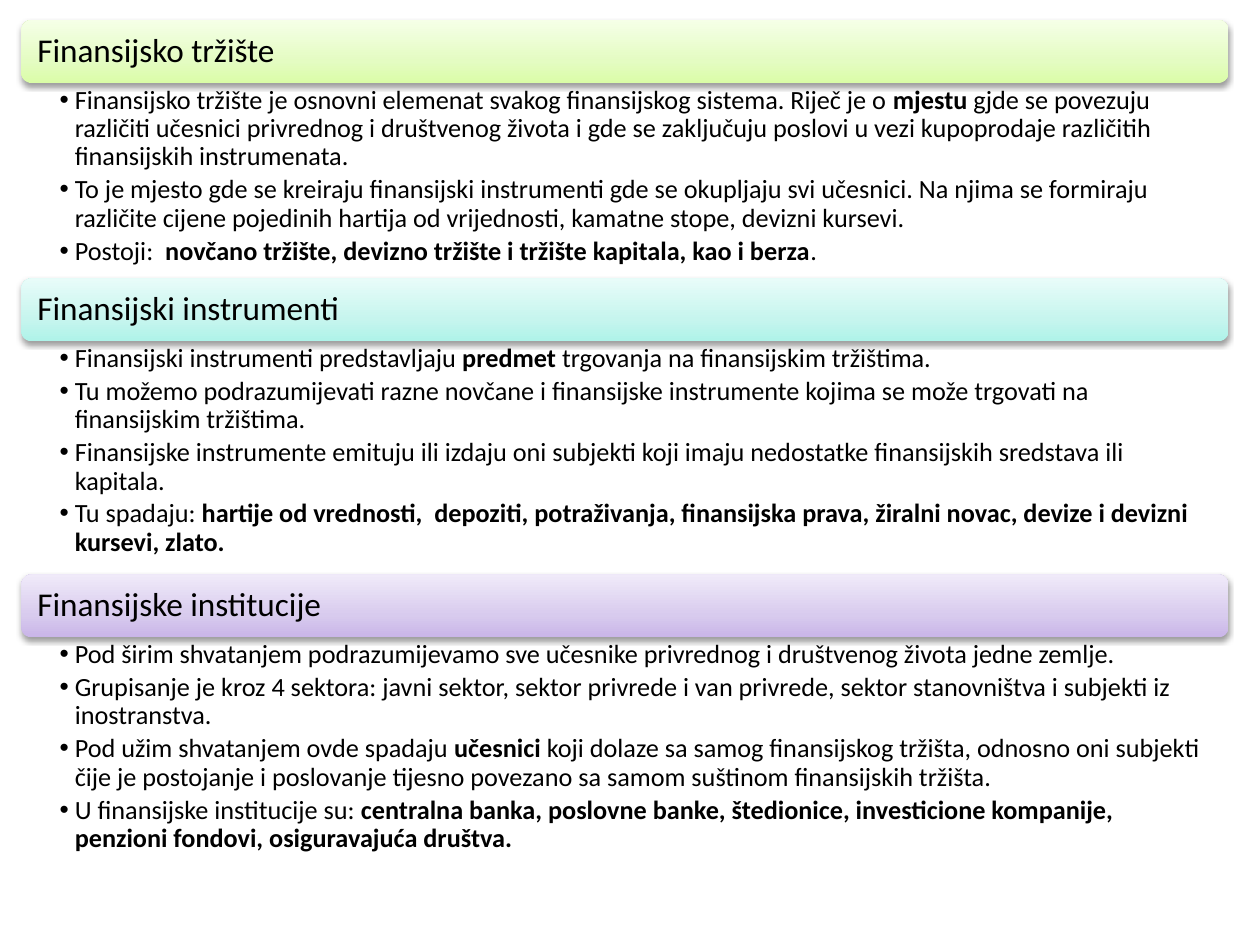
"""Build a slide with three headed sections on the financial market."""
from lxml.etree import SubElement
from pptx import Presentation
from pptx.dml.color import RGBColor
from pptx.enum.shapes import MSO_SHAPE
from pptx.enum.text import MSO_ANCHOR, PP_ALIGN
from pptx.oxml import parse_xml
from pptx.oxml.ns import nsdecls, qn
from pptx.util import Pt

COLORS = {
    "text": "000000",
    "shadow": "000000",
    "market": ("DAFDA7", "E4FCC2", "F5FFE7"),
    "instruments": ("AEF3E9", "C6F5EE", "E8FCF9"),
    "institutions": ("C9B5E8", "D8CBEE", "F0EAF9"),
}
STOPS = (0, 35, 100)
LEFT, TOP, WIDTH, HEADING_HEIGHT = 12.2, 11.5, 689.8, 36
HEADING_FRAME = {
    "margin_left": Pt(7.4), "margin_right": Pt(7.4),
    "margin_top": Pt(5.8), "margin_bottom": Pt(5.8),
    "vertical_anchor": MSO_ANCHOR.MIDDLE, "word_wrap": True,
}
BODY_FRAME = {
    "margin_left": Pt(21.9), "margin_right": Pt(10.8),
    "margin_top": Pt(1.9), "margin_bottom": Pt(1.9),
    "vertical_anchor": MSO_ANCHOR.TOP, "word_wrap": True,
}
HEADING_PARAGRAPH = {"alignment": PP_ALIGN.LEFT, "line_spacing": 0.9}
BODY_PARAGRAPH = {**HEADING_PARAGRAPH, "level": 1, "space_after": Pt(2.6)}
SECTIONS = (
    ("market", "Finansijsko tržište", 111.6, (
        "Finansijsko tržište je osnovni elemenat svakog finansijskog sistema. Riječ je o **mjestu** gjde se povezuju različiti učesnici privrednog i društvenog života i gde se zaključuju poslovi u vezi kupoprodaje različitih finansijskih instrumenata.",
        "To je mjesto gde se kreiraju finansijski instrumenti gde se okupljaju svi učesnici. Na njima se formiraju različite cijene pojedinih hartija od vrijednosti, kamatne stope, devizni kursevi.",
        "Postoji:  **novčano tržište, devizno tržište i tržište kapitala, kao i berza**.",
    )),
    ("instruments", "Finansijski instrumenti", 133.2, (
        "Finansijski instrumenti predstavljaju **predmet **trgovanja na finansijskim tržištima.",
        "Tu možemo podrazumijevati razne novčane i finansijske instrumente kojima se može trgovati na finansijskim tržištima.",
        "Finansijske instrumente emituju ili izdaju oni subjekti koji imaju nedostatke finansijskih sredstava ili kapitala.",
        "Tu spadaju: **hartije od vrednosti,  depoziti, potraživanja, finansijska prava, žiralni novac, devize i devizni kursevi, zlato.**",
    )),
    ("institutions", "Finansijske institucije", 164.2, (
        "Pod širim shvatanjem podrazumijevamo sve učesnike privrednog i društvenog života jedne zemlje.",
        "Grupisanje je kroz 4 sektora: javni sektor, sektor privrede i van privrede, sektor stanovništva i subjekti iz inostranstva.",
        "Pod užim shvatanjem ovde spadaju **učesnici **koji dolaze sa samog finansijskog tržišta, odnosno oni subjekti čije je postojanje i poslovanje tijesno povezano sa samom suštinom finansijskih tržišta.",
        "U finansijske institucije su: **centralna banka, poslovne banke, štedionice, investicione kompanije, penzioni fondovi, osiguravajuća društva.**",
    )),
)


def apply(target, values):
    """Set each named attribute on the target."""
    for name, value in values.items():
        setattr(target, name, value)


class SectionSlide:
    """Hold the text style and the current slide."""

    def __init__(self, slide, font="Calibri", heading_size=19, body_size=15):
        self.slide = slide
        self.font = font
        self.heading_size = heading_size
        self.body_size = body_size

    def add_runs(self, paragraph, text, size):
        """Add runs, with the parts between ** marks in bold."""
        for index, part in enumerate(text.split("**")):
            if part:
                run = paragraph.add_run()
                run.text = part
                apply(run.font, {"name": self.font, "size": Pt(size), "bold": index % 2 == 1})
                run.font.color.rgb = RGBColor.from_string(COLORS["text"])

    def heading(self, text, top, palette):
        """Draw a rounded gradient bar with its heading."""
        bar = self.slide.shapes.add_shape(
            MSO_SHAPE.ROUNDED_RECTANGLE, Pt(LEFT), Pt(top), Pt(WIDTH), Pt(HEADING_HEIGHT))
        stops = "".join(
            f'<a:gs pos="{stop * 1000}"><a:srgbClr val="{color}"/></a:gs>'
            for stop, color in zip(STOPS, palette))
        properties = bar.element.spPr
        properties.append(parse_xml(
            f'<a:gradFill {nsdecls("a")} rotWithShape="1"><a:gsLst>{stops}</a:gsLst>'
            '<a:lin ang="16200000" scaled="0"/></a:gradFill>'))
        bar.line.fill.background()
        properties.append(parse_xml(
            f'<a:effectLst {nsdecls("a")}><a:outerShdw blurRad="{Pt(3.1)}" dist="{Pt(1.6)}" '
            f'dir="5400000" rotWithShape="0"><a:srgbClr val="{COLORS["shadow"]}">'
            '<a:alpha val="38000"/></a:srgbClr></a:outerShdw></a:effectLst>'))
        apply(bar.text_frame, HEADING_FRAME)
        paragraph = bar.text_frame.paragraphs[0]
        apply(paragraph, HEADING_PARAGRAPH)
        self.add_runs(paragraph, text, self.heading_size)

    def bullets(self, points, top, height):
        """Draw the bulleted points of a section."""
        frame = self.slide.shapes.add_textbox(
            Pt(LEFT), Pt(top), Pt(WIDTH), Pt(height)).text_frame
        apply(frame, BODY_FRAME)
        for index, point in enumerate(points):
            paragraph = frame.add_paragraph() if index else frame.paragraphs[0]
            apply(paragraph, BODY_PARAGRAPH)
            properties = paragraph._p.get_or_add_pPr()
            properties.set("marL", str(Pt(8.64)))
            properties.set("indent", str(-Pt(8.64)))
            SubElement(properties, qn("a:buFont")).set("typeface", "Arial")
            SubElement(properties, qn("a:buChar")).set("char", "•")
            self.add_runs(paragraph, point, self.body_size)


def main():
    """Stack the sections and save the presentation."""
    presentation = Presentation()
    apply(presentation, {"slide_width": Pt(720), "slide_height": Pt(540)})
    page = SectionSlide(presentation.slides.add_slide(presentation.slide_layouts[6]))
    top = TOP
    for theme, heading, body_height, points in SECTIONS:
        page.heading(heading, top, COLORS[theme])
        page.bullets(points, top + HEADING_HEIGHT, body_height)
        top += HEADING_HEIGHT + body_height
    presentation.save("out.pptx")


if __name__ == "__main__":
    main()
